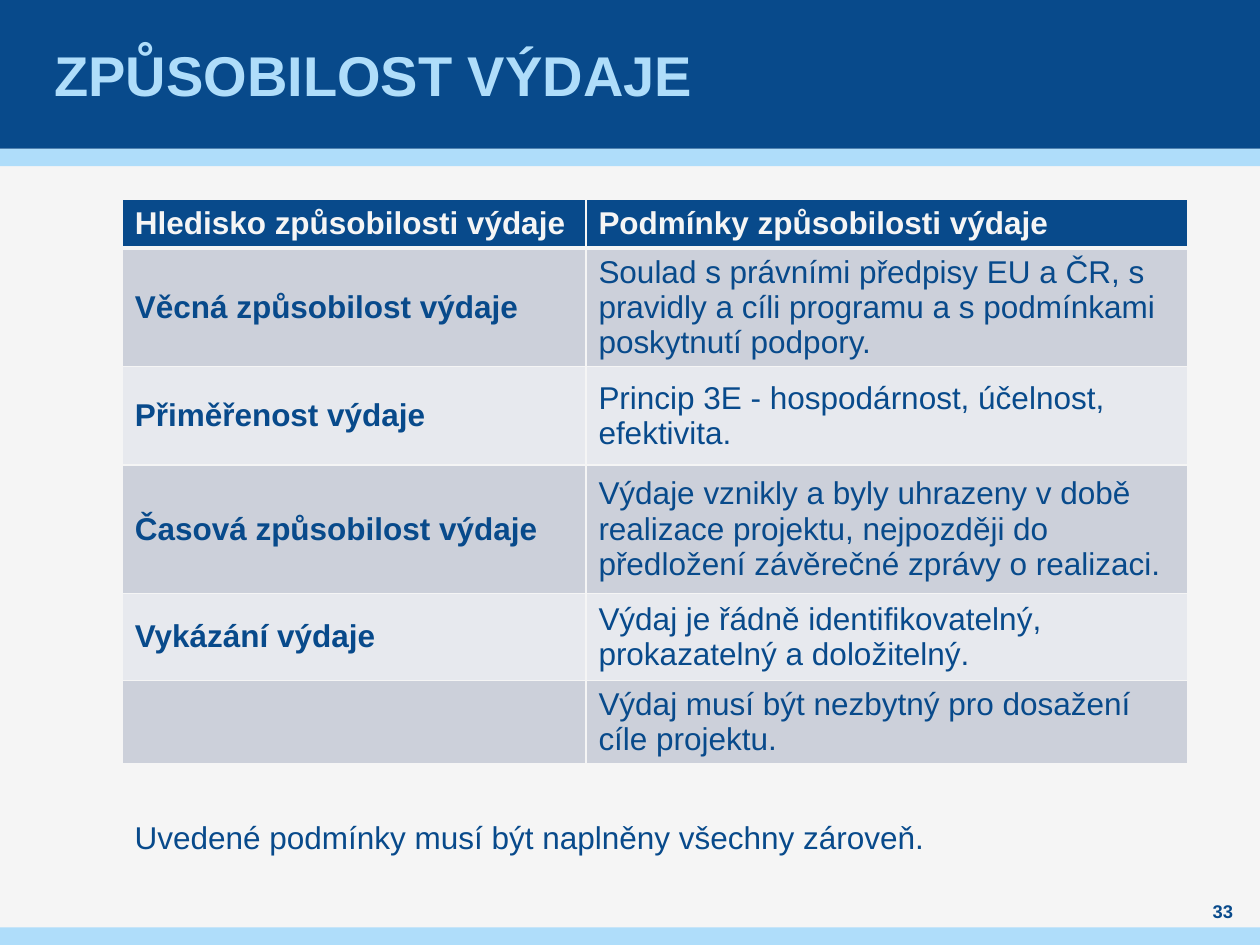
from dataclasses import dataclass

from lxml.etree import SubElement
from pptx import Presentation
from pptx.dml.color import RGBColor
from pptx.enum.shapes import MSO_SHAPE as Shape
from pptx.enum.text import MSO_ANCHOR as Anchor, PP_ALIGN as Align
from pptx.oxml.ns import qn
from pptx.slide import Slide
from pptx.table import _Cell as Cell
from pptx.text.text import TextFrame
from pptx.util import Inches, Pt


@dataclass(frozen=True)
class Theme:
    font: str = "Arial"
    navy: str = "084A8B"
    sky: str = "AFDDFA"
    paper: str = "F5F5F5"
    bands: tuple[str, str] = ("CCD0DA", "E7E9EE")
    title_size: float = 32
    body_size: float = 18
    number_size: float = 10.5


@dataclass(frozen=True)
class Area:
    left: float
    top: float
    width: float
    height: float

    def lengths(self) -> tuple[Inches, ...]:
        return tuple(map(Inches, (self.left, self.top, self.width, self.height)))


@dataclass(frozen=True)
class Bar:
    area: Area
    color: str


@dataclass(frozen=True)
class Label:
    text: str
    area: Area
    size: float
    color: str
    bold: bool = False
    align: Align = Align.LEFT
    anchor: Anchor = Anchor.MIDDLE
    side_inset: float = 0
    top_inset: float = 0


@dataclass(frozen=True)
class Row:
    aspect: str
    condition: str
    height: float


THEME = Theme()
BARS = [
    Bar(Area(0, 1.18, 10, 0.14), THEME.sky),
    Bar(Area(0, 0, 10, 1.18), THEME.navy),
    Bar(Area(0, 7.36, 10, 0.14), THEME.sky),
]
LABELS = [
    Label("ZPŮSOBILOST VÝDAJE", Area(0.39, 0, 9.21, 1.18), THEME.title_size,
          THEME.sky, bold=True, side_inset=0.04),
    Label("33", Area(9.45, 7.13, 0.51, 0.2), THEME.number_size,
          THEME.navy, bold=True, align=Align.CENTER),
    Label("Uvedené podmínky musí být naplněny všechny zároveň.",
          Area(0.97, 6.44, 8.48, 0.71), THEME.body_size, THEME.navy,
          anchor=Anchor.TOP, side_inset=0.1, top_inset=0.05),
]
TABLE_AREA = Area(0.97, 1.58, 8.46, 4.22)
COLUMN_WIDTHS = (3.68, 4.78)
ROWS = [
    Row("Hledisko způsobilosti výdaje", "Podmínky způsobilosti výdaje", 0.39),
    Row("Věcná způsobilost výdaje",
        "Soulad s právními předpisy EU a ČR, s pravidly a cíli programu "
        "a s podmínkami poskytnutí podpory.", 0.77),
    Row("Přiměřenost výdaje", "Princip 3E - hospodárnost, účelnost, efektivita.", 0.78),
    Row("Časová způsobilost výdaje",
        "Výdaje vznikly a byly uhrazeny v době realizace projektu, nejpozději "
        "do předložení závěrečné zprávy o realizaci.", 1.02),
    Row("Vykázání výdaje",
        "Výdaj je řádně identifikovatelný, prokazatelný a doložitelný.", 0.69),
    Row("", "Výdaj musí být nezbytný pro dosažení cíle projektu.", 0.57),
]


def write_text(frame: TextFrame, text: str, size: float, color: str, bold: bool) -> None:
    """Fill a text frame with one formatted paragraph."""
    frame.text = text
    para = frame.paragraphs[0]
    para.font.size = Pt(size)
    for span in para.runs:
        span.font.name = THEME.font
        span.font.size = Pt(size)
        span.font.bold = bold
        span.font.color.rgb = RGBColor.from_string(color)


def draw_bar(page: Slide, bar: Bar) -> None:
    """Draw a plain filled band."""
    shape = page.shapes.add_shape(Shape.RECTANGLE, *bar.area.lengths())
    shape.shadow.inherit = False
    shape.fill.solid()
    shape.fill.fore_color.rgb = RGBColor.from_string(bar.color)
    shape.line.fill.background()


def draw_label(page: Slide, label: Label) -> None:
    """Draw a wrapped text box."""
    frame = page.shapes.add_textbox(*label.area.lengths()).text_frame
    frame.word_wrap = True
    frame.vertical_anchor = label.anchor
    frame.margin_left = frame.margin_right = Inches(label.side_inset)
    frame.margin_top = frame.margin_bottom = Inches(label.top_inset)
    write_text(frame, label.text, label.size, label.color, label.bold)
    frame.paragraphs[0].alignment = label.align


def add_borders(cell: Cell, top: float, bottom: float) -> None:
    """Outline a cell in the page colour, with widths in points."""
    properties = cell._tc.get_or_add_tcPr()
    for side, width in {"L": 1, "R": 1, "T": top, "B": bottom}.items():
        line = SubElement(properties, qn(f"a:ln{side}"), w=str(Pt(width)))
        fill = SubElement(line, qn("a:solidFill"))
        SubElement(fill, qn("a:srgbClr"), val=THEME.paper)


def draw_table(page: Slide, area: Area, widths: tuple[float, ...], rows: list[Row]) -> None:
    """Draw the table with a dark header and alternating bands."""
    table = page.shapes.add_table(len(rows), len(widths), *area.lengths()).table
    for column, width in zip(table.columns, widths):
        column.width = Inches(width)
    for index, row in enumerate(rows):
        table.rows[index].height = Inches(row.height)
        header = index == 0
        fill = THEME.navy if header else THEME.bands[(index - 1) % 2]
        color = THEME.paper if header else THEME.navy
        for position, text in enumerate((row.aspect, row.condition)):
            cell = table.cell(index, position)
            add_borders(cell, top=3 if index == 1 else 1, bottom=3 if header else 1)
            cell.fill.solid()
            cell.fill.fore_color.rgb = RGBColor.from_string(fill)
            cell.vertical_anchor = Anchor.MIDDLE
            write_text(cell.text_frame, text, THEME.body_size, color,
                       bold=header or position == 0)


def main() -> None:
    """Build and save the slide."""
    deck = Presentation()
    deck.slide_width, deck.slide_height = Inches(10), Inches(7.5)
    page = deck.slides.add_slide(deck.slide_layouts[6])
    page.background.fill.solid()
    page.background.fill.fore_color.rgb = RGBColor.from_string(THEME.paper)
    for bar in BARS:
        draw_bar(page, bar)
    draw_table(page, TABLE_AREA, COLUMN_WIDTHS, ROWS)
    for label in LABELS:
        draw_label(page, label)
    deck.save("out.pptx")


if __name__ == "__main__":
    main()
